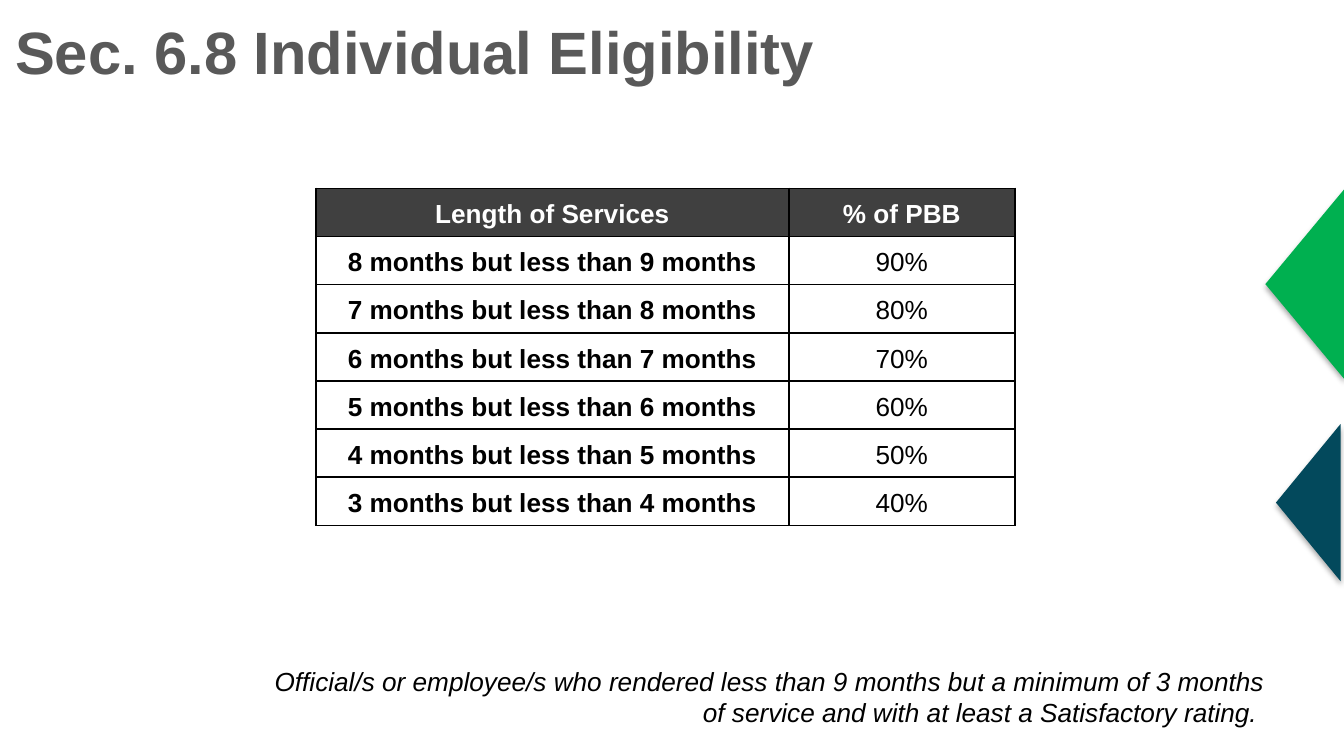
from lxml.etree import SubElement
from pptx import Presentation
from pptx.dml.color import RGBColor
from pptx.enum.shapes import MSO_SHAPE
from pptx.enum.text import MSO_ANCHOR, MSO_AUTO_SIZE, PP_ALIGN
from pptx.oxml import parse_xml
from pptx.oxml.ns import nsdecls, qn
from pptx.util import Cm, Pt

COLORS = {
    "title": "595959",
    "header": "404040",
    "white": "FFFFFF",
    "black": "000000",
    "green": "00B050",
    "teal": "03495C",
}
FONT = "Arial"
TITLE = "Sec. 6.8 Individual Eligibility"
HEADER = ("Length of Services", "% of PBB")
ELIGIBILITY = [
    (f"{months} months but less than {months + 1} months", f"{months + 1}0%")
    for months in range(8, 2, -1)
]
NOTE = (
    "Official/s or employee/s who rendered less than 9 months but a minimum of "
    "3 months of service and with at least a Satisfactory rating. "
)
COLUMN_WIDTHS = (8.94, 4.27)
ROW_HEIGHT = 0.91
TRIANGLES = [
    (22.86, 4.62, 3.61, 1.5, "green"),
    (23.24, 8.89, 2.97, 1.22, "teal"),
]


def color(name):
    return RGBColor.from_string(COLORS[name])


def format_paragraph(paragraph, size, color_name, alignment, bold=False, italic=False):
    paragraph.alignment = alignment
    font = paragraph.font
    font.name, font.size = FONT, Pt(size)
    font.bold, font.italic = bold, italic
    font.color.rgb = color(color_name)


def add_borders(cell):
    properties = cell._tc.get_or_add_tcPr()
    for index, side in enumerate(("a:lnL", "a:lnR", "a:lnT", "a:lnB")):
        line = parse_xml(
            f'<{side} {nsdecls("a")} w="12700"><a:solidFill>'
            f'<a:srgbClr val="{COLORS["black"]}"/></a:solidFill></{side}>'
        )
        properties.insert(index, line)


def add_shadow(shape):
    effects = shape._element.spPr.find(qn("a:effectLst"))
    shadow = SubElement(
        effects, qn("a:outerShdw"),
        blurRad=str(Pt(3.1)), dist=str(Pt(1.8)), dir="5400000", rotWithShape="0",
    )
    shade = SubElement(shadow, qn("a:srgbClr"), val=COLORS["black"])
    SubElement(shade, qn("a:alpha"), val="35000")


def add_title(slide):
    title = slide.shapes.title
    title.left, title.top, title.width, title.height = map(Cm, (0.03, 0.15, 25.48, 1.63))
    frame = title.text_frame
    frame.text = TITLE
    frame.word_wrap = True
    frame.auto_size = MSO_AUTO_SIZE.NONE
    frame.vertical_anchor = MSO_ANCHOR.TOP
    format_paragraph(frame.paragraphs[0], 32, "title", PP_ALIGN.LEFT, bold=True)


def add_eligibility_table(slide):
    rows = [HEADER, *ELIGIBILITY]
    table = slide.shapes.add_table(
        len(rows), len(HEADER), Cm(5.97), Cm(3.56),
        Cm(sum(COLUMN_WIDTHS)), Cm(ROW_HEIGHT * len(rows)),
    ).table
    for column, width in zip(table.columns, COLUMN_WIDTHS):
        column.width = Cm(width)
    for row_index, texts in enumerate(rows):
        table.rows[row_index].height = Cm(ROW_HEIGHT)
        is_header = row_index == 0
        for column_index, text in enumerate(texts):
            cell = table.cell(row_index, column_index)
            cell.text = text
            cell.vertical_anchor = MSO_ANCHOR.MIDDLE
            cell.margin_left = cell.margin_right = Cm(0.18)
            cell.margin_top = cell.margin_bottom = 0
            cell.fill.solid()
            cell.fill.fore_color.rgb = color("header" if is_header else "white")
            add_borders(cell)
            paragraph = cell.text_frame.paragraphs[0]
            paragraph.line_spacing = 1.15
            format_paragraph(
                paragraph, 14, "white" if is_header else "black", PP_ALIGN.CENTER,
                bold=is_header or column_index == 0,
            )


def add_note(slide):
    frame = slide.shapes.add_textbox(Cm(4.6), Cm(12.45), Cm(19.56), Cm(1.45)).text_frame
    frame.word_wrap = True
    frame.text = NOTE
    format_paragraph(frame.paragraphs[0], 14, "black", PP_ALIGN.RIGHT, italic=True)


def add_triangles(slide):
    for left, top, width, height, fill in TRIANGLES:
        triangle = slide.shapes.add_shape(
            MSO_SHAPE.ISOSCELES_TRIANGLE, Cm(left), Cm(top), Cm(width), Cm(height)
        )
        triangle.rotation = 270
        triangle.fill.solid()
        triangle.fill.fore_color.rgb = color(fill)
        triangle.line.fill.background()
        triangle.shadow.inherit = False
        add_shadow(triangle)


def main():
    presentation = Presentation()
    presentation.slide_width, presentation.slide_height = Cm(25.4), Cm(14.29)
    slide = presentation.slides.add_slide(presentation.slide_layouts[5])
    add_title(slide)
    add_eligibility_table(slide)
    add_note(slide)
    add_triangles(slide)
    presentation.save("out.pptx")


if __name__ == "__main__":
    main()
